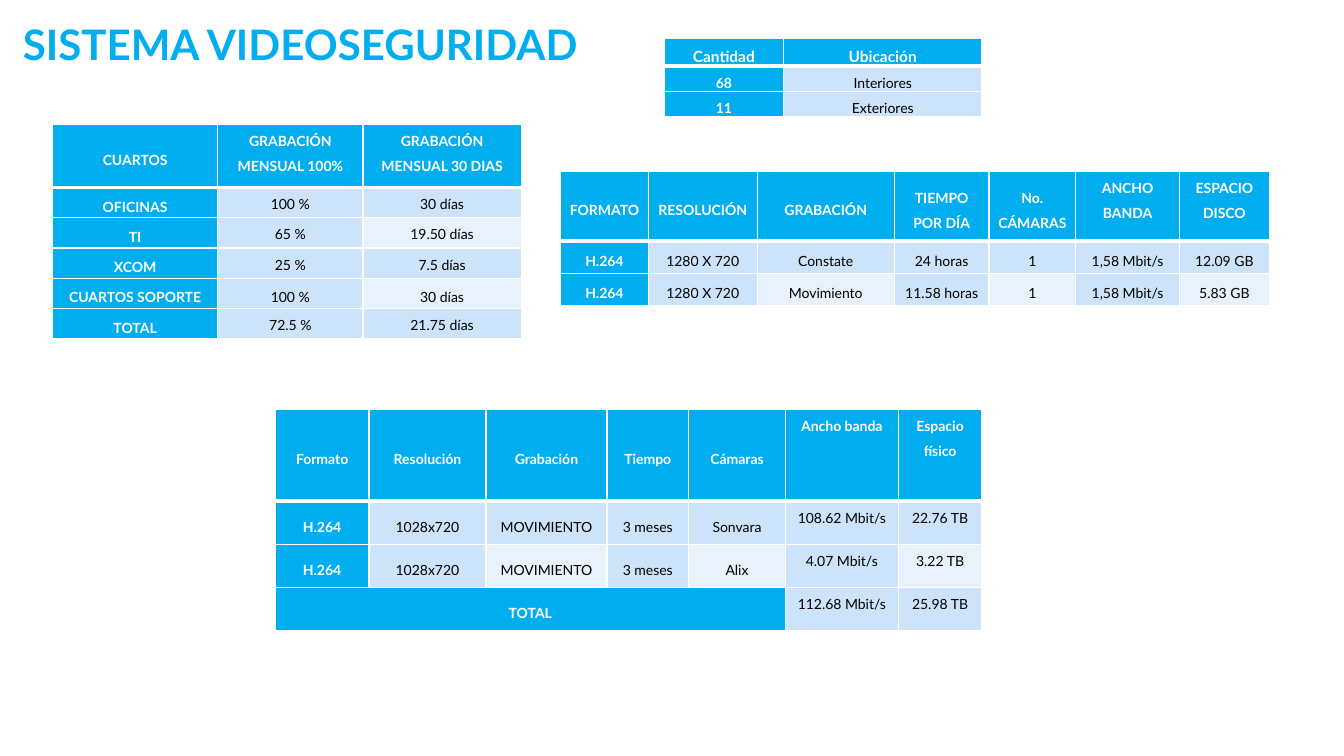
"""Build the video security slide with its four data tables."""
from dataclasses import dataclass
from itertools import product

from lxml.etree import SubElement
from pptx import Presentation
from pptx.dml.color import RGBColor
from pptx.enum.text import MSO_ANCHOR, PP_ALIGN
from pptx.oxml.ns import qn
from pptx.slide import Slide
from pptx.table import _Cell
from pptx.util import Inches, Pt

FONT = "Lato"
BLUE = RGBColor(0x00, 0xAE, 0xEF)
PALE = RGBColor(0xCC, 0xE3, 0xF9)
PALEST = RGBColor(0xE7, 0xF2, 0xFC)
WHITE = RGBColor(0xFF, 0xFF, 0xFF)
BLACK = RGBColor(0x00, 0x00, 0x00)


@dataclass(frozen=True)
class TableSpec:
    left: float
    top: float
    widths: list[float]
    header_height: float
    row_height: float
    rows: list[list[str]]
    top_cells: set[tuple[int, int]]
    header_size: int = 10
    space_after: int = 10
    total_span: int = 0


TABLES = [
    TableSpec(
        0.52, 1.23, [1.64, 1.44, 1.57], 0.63, 0.3,
        [["CUARTOS", "GRABACIÓN MENSUAL 100%", "GRABACIÓN MENSUAL 30 DIAS"],
         ["OFICINAS", "100 %", "30 días"],
         ["TI", "65 %", "19.50 días"],
         ["XCOM", "25 %", "7.5 días"],
         ["CUARTOS SOPORTE", "100 %", "30 días"],
         ["TOTAL", "72.5 %", "21.75 días"]],
        set(product((0, 1, 2, 3, 5), (1, 2))),
    ),
    TableSpec(
        5.56, 1.7, [0.87, 1.08, 1.36, 0.94, 0.86, 1.03, 0.89], 0.69, 0.32,
        [["FORMATO", "RESOLUCIÓN", "GRABACIÓN", "TIEMPO POR DÍA",
          "No. CÁMARAS", "ANCHO BANDA", "ESPACIO DISCO"],
         ["H.264", "1280 X 720", "Constate", "24 horas", "1", "1,58 Mbit/s", "12.09 GB"],
         ["H.264", "1280 X 720", "Movimiento", "11.58 horas", "1", "1,58 Mbit/s", "5.83 GB"]],
        {(0, 5), (0, 6)},
    ),
    TableSpec(
        2.73, 4.06, [0.93, 1.16, 1.2, 0.81, 0.96, 1.12, 0.83], 0.91, 0.43,
        [["Formato", "Resolución", "Grabación", "Tiempo", "Cámaras",
          "Ancho banda", "Espacio físico"],
         ["H.264", "1028x720", "MOVIMIENTO", "3 meses", "Sonvara", "108.62 Mbit/s", "22.76 TB"],
         ["H.264", "1028x720", "MOVIMIENTO", "3 meses", "Alix", "4.07 Mbit/s", "3.22 TB"],
         ["TOTAL", "", "", "", "", "112.68 Mbit/s", "25.98 TB"]],
        set(product(range(4), (5, 6))),
        total_span=5,
    ),
    TableSpec(
        6.59, 0.38, [1.18, 1.97], 0.23, 0.23,
        [["Cantidad", "Ubicación"], ["68", "Interiores"], ["11", "Exteriores"]],
        set(product(range(3), range(2))),
        header_size=11, space_after=0,
    ),
]


def add_borders(cell: _Cell, row: int) -> None:
    tc_pr = cell._tc.get_or_add_tcPr()
    widths = {"lnL": 1, "lnR": 1, "lnT": 3 if row == 1 else 1, "lnB": 3 if row == 0 else 1}
    for side, width in widths.items():
        line = SubElement(tc_pr, qn(f"a:{side}"), w=str(Pt(width)))
        SubElement(SubElement(line, qn("a:solidFill")), qn("a:srgbClr"), val=str(WHITE))


def fill_cell(cell: _Cell, spec: TableSpec, row: int, col: int) -> None:
    heading = row == 0 or col == 0
    add_borders(cell, row)
    cell.fill.solid()
    lightest = row % 2 == 0 and col % 2 == 0
    cell.fill.fore_color.rgb = BLUE if heading else PALEST if lightest else PALE
    cell.margin_left = cell.margin_right = Inches(0.07)
    cell.margin_top = cell.margin_bottom = 0
    cell.vertical_anchor = MSO_ANCHOR.TOP if (row, col) in spec.top_cells else MSO_ANCHOR.MIDDLE
    cell.text_frame.text = spec.rows[row][col]
    p = cell.text_frame.paragraphs[0]
    p.alignment = PP_ALIGN.CENTER
    p.line_spacing = 1.5
    p.space_after = Pt(spec.space_after)
    for r in p.runs:
        r.font.name = FONT
        r.font.size = Pt(spec.header_size if row == 0 else 10)
        r.font.bold = heading
        r.font.color.rgb = WHITE if heading else BLACK


def add_data_table(s: Slide, spec: TableSpec) -> None:
    heights = [spec.header_height] + [spec.row_height] * (len(spec.rows) - 1)
    table = s.shapes.add_table(
        len(heights), len(spec.widths), Inches(spec.left), Inches(spec.top),
        Inches(sum(spec.widths)), Inches(sum(heights)),
    ).table
    table.horz_banding = False
    for column, width in zip(table.columns, spec.widths):
        column.width = Inches(width)
    for table_row, height in zip(table.rows, heights):
        table_row.height = Inches(height)
    for row, col in product(range(len(heights)), range(len(spec.widths))):
        fill_cell(table.cell(row, col), spec, row, col)
    if spec.total_span:
        last = len(heights) - 1
        table.cell(last, 0).merge(table.cell(last, spec.total_span - 1))


def add_title(s: Slide, text: str) -> None:
    sp = s.shapes.add_textbox(Inches(0.13), Inches(0.13), Inches(9.5), Inches(0.6))
    tf = sp.text_frame
    tf.word_wrap = True
    tf.vertical_anchor = MSO_ANCHOR.BOTTOM
    tf.text = text
    p = tf.paragraphs[0]
    p.line_spacing = 0.8
    r = p.runs[0]
    r.font.name = FONT
    r.font.size = Pt(30)
    r.font.bold = True
    r.font.color.rgb = BLUE


def main() -> None:
    prs = Presentation()
    prs.slide_width = Inches(13.33)
    prs.slide_height = Inches(7.5)
    s = prs.slides.add_slide(prs.slide_layouts[6])
    add_title(s, "SISTEMA VIDEOSEGURIDAD")
    for spec in TABLES:
        add_data_table(s, spec)
    prs.save("out.pptx")


if __name__ == "__main__":
    main()
